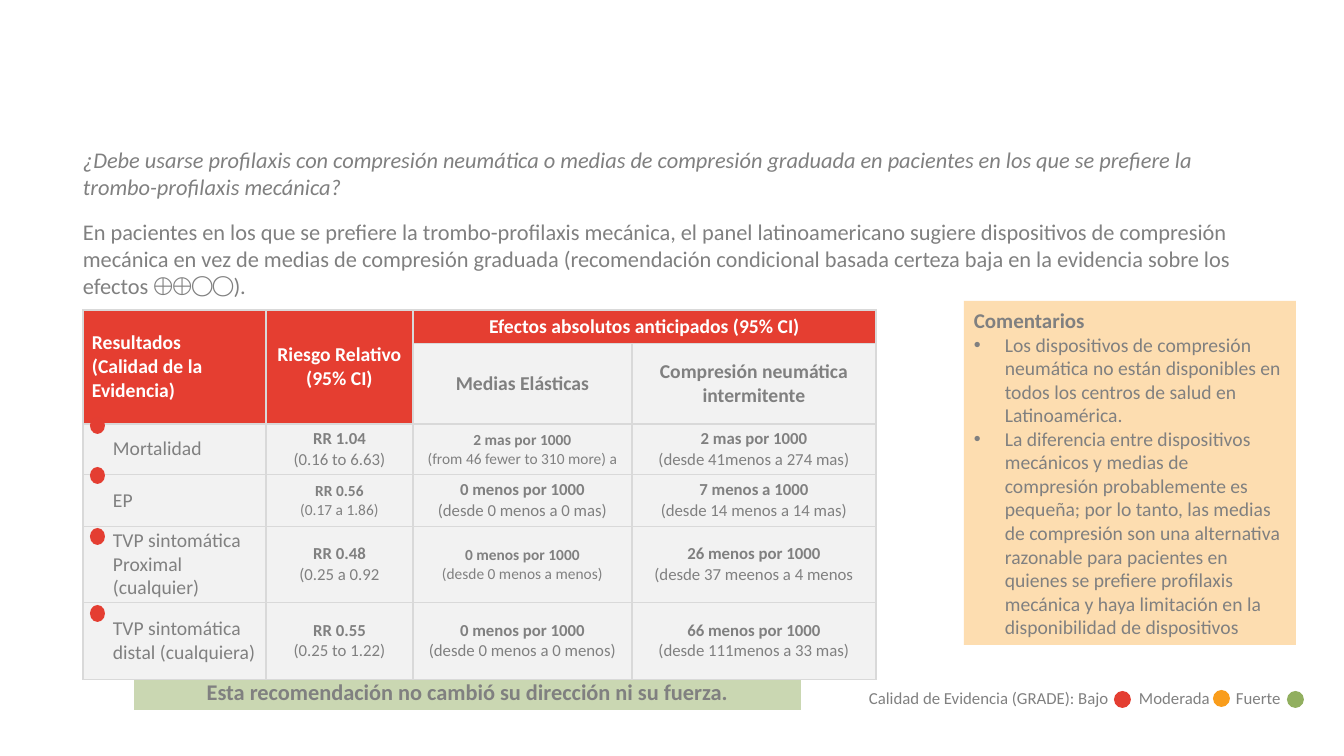
"""Build the slide on mechanical thromboprophylaxis with its evidence table."""
import pptx
import pptx.util
import pptx.dml.color
import pptx.enum.shapes
import pptx.enum.text
import pptx.oxml
import pptx.oxml.ns

PX = 914400 / 100.8
COLORS = {
    "gray": "808080", "white": "FFFFFF", "header": "E53E31", "cell": "F2F2F2",
    "border": "D9D9D9", "low": "E43E32", "moderate": "F99D1C", "strong": "91AF5F",
    "comments": "FDDDB0", "banner": "CAD7B2",
}
SHAPES = pptx.enum.shapes.MSO_SHAPE
CENTER = pptx.enum.text.PP_ALIGN.CENTER
LEFT = pptx.enum.text.PP_ALIGN.LEFT
MIDDLE = pptx.enum.text.MSO_ANCHOR.MIDDLE


def px(*lengths):
    """Turn pixel lengths into EMU."""
    return [pptx.util.Emu(round(length * PX)) for length in lengths]


def write(frame, text, size=14, color="gray", bold=False, italic=False,
          font="Calibri", align=LEFT, bullet=False, join=False):
    """Add a run, in a new paragraph unless it joins the last one."""
    paragraph = frame.paragraphs[-1]
    if paragraph.runs and not join:
        paragraph = frame.add_paragraph()
    paragraph.alignment = align
    if bullet:
        properties = paragraph._p.get_or_add_pPr()
        indent = px(31)[0]
        properties.set("marL", str(indent))
        properties.set("indent", str(-indent))
        properties.append(pptx.oxml.parse_xml(
            f'<a:buFont {pptx.oxml.ns.nsdecls("a")} typeface="Arial"/>'))
        properties.append(pptx.oxml.parse_xml(
            f'<a:buChar {pptx.oxml.ns.nsdecls("a")} char="•"/>'))
    run = paragraph.add_run()
    run.text = text
    run.font.name = font
    run.font.size = pptx.util.Pt(size)
    run.font.bold = bold
    run.font.italic = italic
    run.font.color.rgb = pptx.dml.color.RGBColor.from_string(COLORS[color])
    return paragraph


presentation = pptx.Presentation()
presentation.slide_width, presentation.slide_height = px(1344, 756)
slide = presentation.slides.add_slide(presentation.slide_layouts[6])

frames = []
for box in [(83, 146, 1152, 72), (83, 218, 1173, 84)]:
    frame = slide.shapes.add_textbox(*px(*box)).text_frame
    frame.word_wrap = True
    frame.margin_left = frame.margin_right = frame.margin_top = frame.margin_bottom = 0
    frames.append(frame)
question, recommendation = frames

write(question, "¿Debe usarse profilaxis con compresión neumática o medias de compresión "
      "graduada en pacientes en los que se prefiere la trombo-profilaxis mecánica?",
      size=16, italic=True)
write(recommendation, "En pacientes en los que se prefiere la trombo-profilaxis mecánica, el "
      "panel latinoamericano sugiere dispositivos de compresión mecánica en vez de medias de "
      "compresión graduada (recomendación condicional basada certeza baja en la evidencia "
      "sobre los efectos ", size=16)
write(recommendation, "⨁⨁◯◯", size=16, font="Times New Roman", join=True)
write(recommendation, ").", size=16, join=True)

panels = {}
for name, box in {"comments": (964, 301, 332, 344), "banner": (134, 673, 667, 37)}.items():
    shape = slide.shapes.add_shape(SHAPES.RECTANGLE, *px(*box))
    shape.shadow.inherit = False
    shape.fill.solid()
    shape.fill.fore_color.rgb = pptx.dml.color.RGBColor.from_string(COLORS[name])
    shape.line.fill.background()
    panels[name] = shape.text_frame
    panels[name].word_wrap = True
    panels[name].vertical_anchor = MIDDLE

write(panels["comments"], "Comentarios", size=15, bold=True)
for comment in [
    "Los dispositivos de compresión neumática no están disponibles en todos los centros de "
    "salud en Latinoamérica.",
    "La diferencia entre dispositivos mecánicos y medias de compresión probablemente es "
    "pequeña; por lo tanto, las medias de compresión son una alternativa razonable para "
    "pacientes en quienes se prefiere profilaxis mecánica y haya limitación en la "
    "disponibilidad de dispositivos",
]:
    write(panels["comments"], comment, bullet=True)
write(panels["banner"], "Esta recomendación no cambió su dirección ni su fuerza.",
      size=16, bold=True, align=CENTER)

column_widths = [183, 147, 219, 244]
row_heights = [33, 80, 50, 52, 76, 77]
table = slide.shapes.add_table(
    len(row_heights), len(column_widths),
    *px(83, 310, sum(column_widths), sum(row_heights))).table
table.first_row = table.horz_banding = False
for column, width in zip(table.columns, px(*column_widths)):
    column.width = width
for row, height in zip(table.rows, px(*row_heights)):
    row.height = height

for row in range(len(row_heights)):
    for column in range(len(column_widths)):
        cell = table.cell(row, column)
        is_header = row == 0 or (row == 1 and column < 2)
        cell.fill.solid()
        cell.fill.fore_color.rgb = pptx.dml.color.RGBColor.from_string(
            COLORS["header" if is_header else "cell"])
        cell.vertical_anchor = MIDDLE
        cell.margin_left, cell.margin_right, cell.margin_top, cell.margin_bottom = px(9, 9, 5, 5)
        for position, side in enumerate(["lnL", "lnR", "lnT", "lnB"]):
            cell._tc.get_or_add_tcPr().insert(position, pptx.oxml.parse_xml(
                f'<a:{side} {pptx.oxml.ns.nsdecls("a")} w="12700"><a:solidFill>'
                f'<a:srgbClr val="{COLORS["border"]}"/></a:solidFill></a:{side}>'))

for first, last in [((0, 0), (1, 0)), ((0, 1), (1, 1)), ((0, 2), (0, 3))]:
    table.cell(*first).merge(table.cell(*last))

headings = [
    (0, 0, ["Resultados", "(Calidad de la Evidencia)"], "white", LEFT),
    (0, 1, ["Riesgo Relativo", "(95% CI)"], "white", CENTER),
    (0, 2, ["Efectos absolutos anticipados (95% CI)"], "white", CENTER),
    (1, 2, ["Medias Elásticas"], "gray", CENTER),
    (1, 3, ["Compresión neumática intermitente"], "gray", CENTER),
]
for row, column, lines, color, align in headings:
    for line in lines:
        write(table.cell(row, column).text_frame, line, color=color, bold=True, align=align)

outcomes = [
    (["Mortalidad"],
     [("RR 1.04", "(0.16 to 6.63)", 12),
      ("2 mas por 1000", "(from 46 fewer to 310 more) a", 11),
      ("2 mas por 1000", "(desde 41menos a 274 mas)", 12)]),
    (["EP"],
     [("RR 0.56", "(0.17 a 1.86)", 11),
      ("0 menos por 1000", "(desde 0 menos a 0 mas)", 12),
      ("7 menos a 1000", "(desde 14 menos a 14 mas)", 12)]),
    (["TVP sintomática", "Proximal (cualquier)"],
     [("RR 0.48", "(0.25 a 0.92", 12),
      ("0 menos por 1000", "(desde 0 menos a menos)", 11),
      ("26 menos por 1000", "(desde 37 meenos a 4 menos", 12)]),
    (["TVP sintomática", "distal (cualquiera)"],
     [("RR 0.55", "(0.25 to 1.22)", 12),
      ("0 menos por 1000", "(desde 0 menos a 0 menos)", 12),
      ("66 menos por 1000", "(desde 111menos a 33 mas)", 12)]),
]
for row, (labels, effects) in enumerate(outcomes, start=2):
    label_cell = table.cell(row, 0)
    label_cell.margin_left = px(30)[0]
    if len(labels) > 1:
        label_cell.margin_right = label_cell.margin_top = label_cell.margin_bottom = 0
    for label in labels:
        write(label_cell.text_frame, label)
    for column, (effect, interval, size) in enumerate(effects, start=1):
        frame = table.cell(row, column).text_frame
        write(frame, effect, size=size, bold=True, align=CENTER).add_line_break()
        write(frame, interval, size=size, align=CENTER, join=True)

legend = [("Calidad de Evidencia (GRADE): Bajo", 869, 250),
          ("Moderada", 1139, 80), ("Fuerte", 1236, 54)]
for label, left, width in legend:
    frame = slide.shapes.add_textbox(*px(left, 683, width, 30)).text_frame
    frame.margin_left = frame.margin_right = 0
    write(frame, label, size=12)

dots = [(90, top, 15, "low") for top in (417, 467, 528, 605)]
dots += [(1114, 691, 17, "low"), (1213, 690, 17, "moderate"), (1287, 691, 17, "strong")]
for left, top, width, color in dots:
    dot = slide.shapes.add_shape(SHAPES.OVAL, *px(left, top, width, 17))
    dot.shadow.inherit = False
    dot.fill.solid()
    dot.fill.fore_color.rgb = pptx.dml.color.RGBColor.from_string(COLORS[color])
    dot.line.fill.background()

presentation.save("out.pptx")
